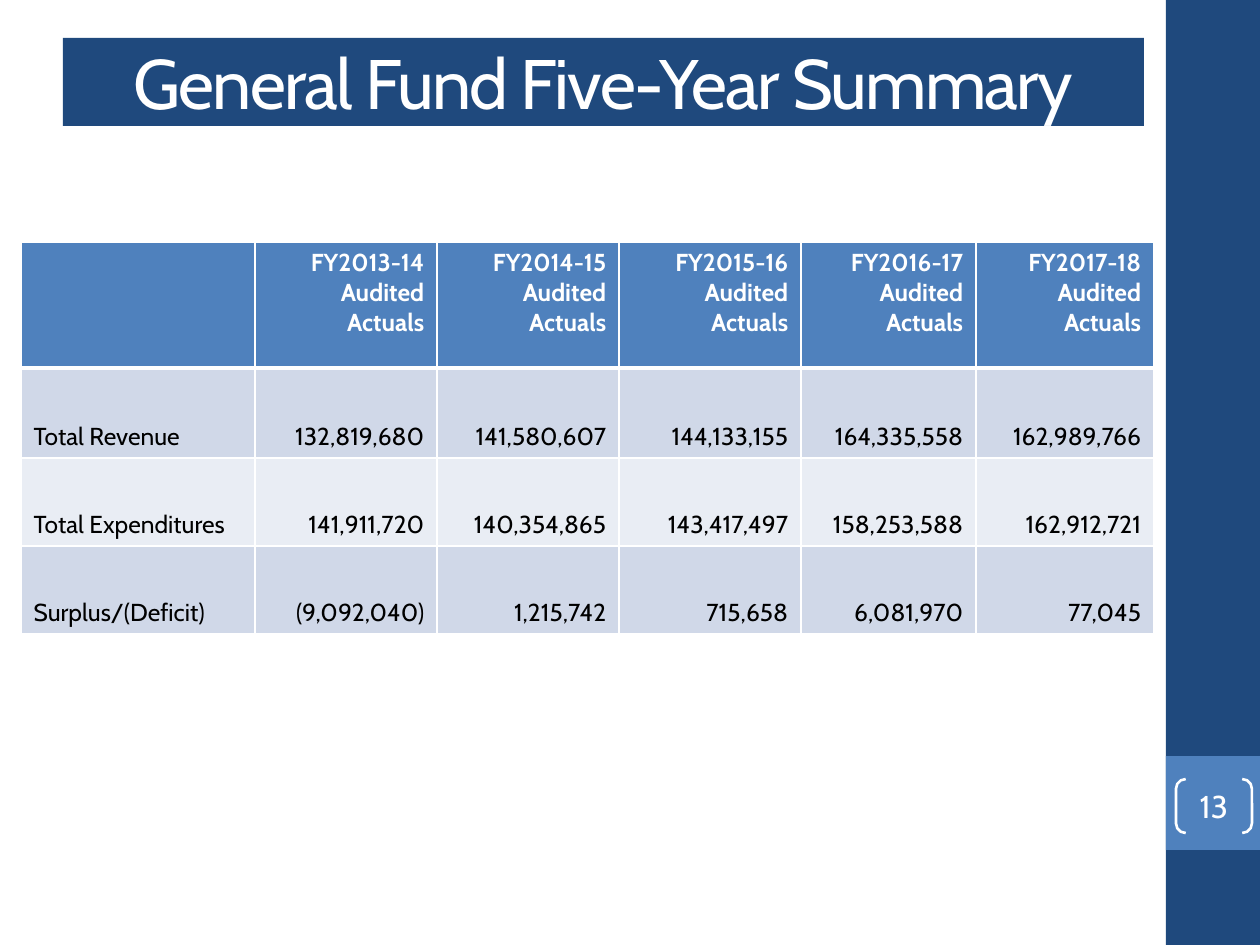
from lxml import etree
from pptx import Presentation
from pptx.dml.color import RGBColor
from pptx.enum.shapes import MSO_SHAPE
from pptx.enum.text import MSO_ANCHOR, PP_ALIGN
from pptx.oxml.ns import qn
from pptx.util import Pt

RECT, BRACKETS = MSO_SHAPE.RECTANGLE, MSO_SHAPE.DOUBLE_BRACKET
LEFT, CENTER, RIGHT = PP_ALIGN.LEFT, PP_ALIGN.CENTER, PP_ALIGN.RIGHT
TOP, MIDDLE, BOTTOM = MSO_ANCHOR.TOP, MSO_ANCHOR.MIDDLE, MSO_ANCHOR.BOTTOM
FONT = "Cabin"
NAVY, BLUE, WHITE, BLACK = "1F497D", "4F81BD", "FFFFFF", "000000"
BANDS = ["D0D8E8", "E9EDF4"]
COLS = [234, 182, 182, 182, 175, 178]
ROWS = [126, 90, 88, 88]
DATA = [
    ["", "FY2013-14 Audited Actuals", "FY2014-15 Audited Actuals",
     "FY2015-16 Audited Actuals", "FY2016-17\nAudited Actuals",
     "FY2017-18\nAudited Actuals"],
    ["Total Revenue", "132,819,680", "141,580,607", "144,133,155",
     "164,335,558", "162,989,766"],
    ["Total Expenditures", "141,911,720", "140,354,865", "143,417,497",
     "158,253,588", "162,912,721"],
    ["Surplus/(Deficit)", "(9,092,040)", "1,215,742", "715,658",
     "6,081,970", "77,045"],
]


def px(n):
    """Turn pixels at 126 to the inch into EMU."""
    return round(n * 914400 / 126)


def rgb(color):
    """Turn a hex string into a colour."""
    return RGBColor.from_string(color)


def write(tf, text, size=14, color=BLACK, bold=False, align=LEFT, spacing=0):
    """Write text into a frame, one paragraph a line."""
    for i, line in enumerate(text.split("\n")):
        p = tf.add_paragraph() if i else tf.paragraphs[0]
        p.alignment = align
        r = p.add_run()
        r.text = line
        r.font.name, r.font.size, r.font.bold = FONT, Pt(size), bold
        r.font.color.rgb = rgb(color)
        if spacing:
            r._r.get_or_add_rPr().set("spc", str(spacing))


def add_shape(s, kind, x, y, w, h, fill=None, line=None):
    """Add a flat preset shape with an optional fill and line."""
    sp = s.shapes.add_shape(kind, px(x), px(y), px(w), px(h))
    sp.shadow.inherit = False
    if fill:
        sp.fill.solid()
        sp.fill.fore_color.rgb = rgb(fill)
    else:
        sp.fill.background()
    if line:
        sp.line.color.rgb = rgb(line)
        sp.line.width = Pt(1.5)
    else:
        sp.line.fill.background()
    sp.text_frame.vertical_anchor = MIDDLE
    return sp


def set_borders(cell, **widths):
    """Give a cell white borders with widths in points by side."""
    tcPr = cell._tc.get_or_add_tcPr()
    for side in "LRTB":
        ln = etree.SubElement(tcPr, qn(f"a:ln{side}"),
                              w=str(Pt(widths.get(side, 1))))
        fill = etree.SubElement(ln, qn("a:solidFill"))
        etree.SubElement(fill, qn("a:srgbClr"), val=WHITE)


def add_title(s, x, y, w, h):
    """Place the title bar."""
    sp = add_shape(s, RECT, x, y, w, h, fill=NAVY)
    sp.text_frame.word_wrap = True
    write(sp.text_frame, "General Fund Five-Year Summary", size=40,
          color=WHITE, align=CENTER, spacing=-100)


def add_sidebar(s, x, y, w, h):
    """Place the side band with its page number."""
    add_shape(s, RECT, x, y, w, h, fill=NAVY)
    add_shape(s, RECT, x, y + 756, w, w, fill=BLUE)
    sp = add_shape(s, BRACKETS, x + 10, y + 779, 76, 54, line=WHITE)
    sp.adjustments[0] = 0.18
    tf = sp.text_frame
    tf.margin_left = tf.margin_right = tf.margin_top = tf.margin_bottom = 0
    write(tf, "13", size=18, color=WHITE, align=CENTER)


def add_summary(s, x, y):
    """Place the five-year table."""
    table = s.shapes.add_table(len(ROWS), len(COLS), px(x), px(y),
                               px(sum(COLS)), px(sum(ROWS))).table
    for col, w in zip(table.columns, COLS):
        col.width = px(w)
    for i, (row, h) in enumerate(zip(table.rows, ROWS)):
        row.height = px(h)
        head = i == 0
        for j, text in enumerate(DATA[i]):
            cell = table.cell(i, j)
            set_borders(cell, T=3 if i == 1 else 1, B=3 if head else 1)
            cell.fill.solid()
            cell.fill.fore_color.rgb = rgb(BLUE if head else BANDS[(i - 1) % 2])
            cell.vertical_anchor = TOP if head else BOTTOM
            if text:
                write(cell.text_frame, text, color=WHITE if head else BLACK,
                      bold=head, align=RIGHT if j else LEFT)


def main():
    """Build and save the slide."""
    prs = Presentation()
    prs.slide_width, prs.slide_height = px(1260), px(945)
    s = prs.slides.add_slide(prs.slide_layouts[6])
    add_sidebar(s, 1166, 0, 94, 945)
    add_title(s, 63, 38, 1081, 88)
    add_summary(s, 21, 242)
    prs.save("out.pptx")


if __name__ == "__main__":
    main()
